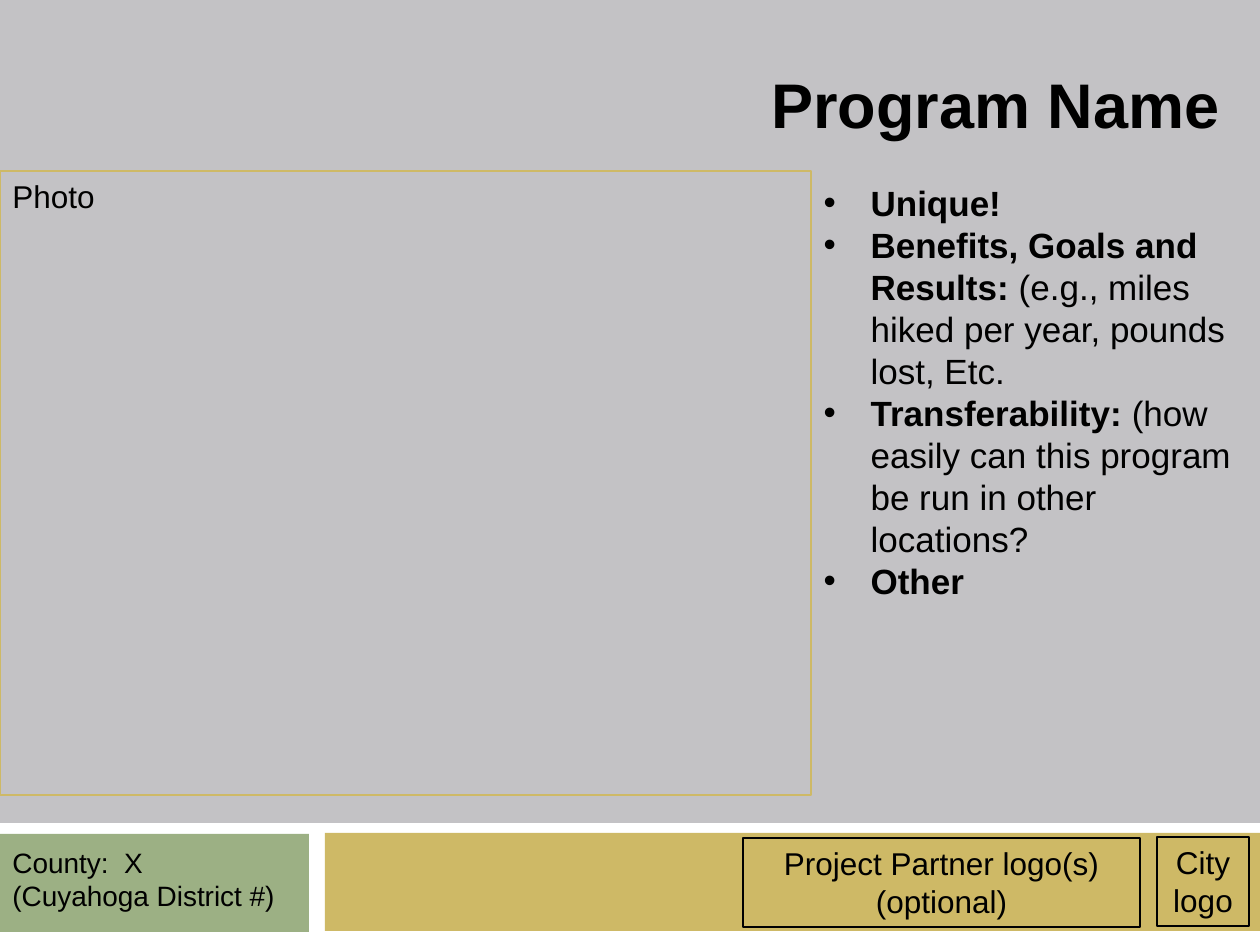
from dataclasses import dataclass
from typing import Optional

from lxml import etree
from pptx import Presentation
from pptx.dml.color import RGBColor
from pptx.enum import shapes, text
from pptx.oxml import ns
from pptx.util import Emu, Pt

EMU_PER_PX = 914400 / 126
BULLET_INDENT = 47
FONT = "Arial"
BLACK = RGBColor(0x00, 0x00, 0x00)
WHITE = RGBColor(0xFF, 0xFF, 0xFF)
GRAY = RGBColor(0xC3, 0xC2, 0xC5)
GREEN = RGBColor(0x9C, 0xB0, 0x84)
GOLD = RGBColor(0xCE, 0xB9, 0x66)
LEFT, CENTER, RIGHT = text.PP_ALIGN.LEFT, text.PP_ALIGN.CENTER, text.PP_ALIGN.RIGHT
TOP, BOTTOM = text.MSO_ANCHOR.TOP, text.MSO_ANCHOR.BOTTOM


@dataclass(frozen=True)
class Area:
    left: int
    top: int
    width: int
    height: int


@dataclass(frozen=True)
class Words:
    content: str
    bold: bool = False


@dataclass(frozen=True)
class Panel:
    area: Area
    fill: Optional[RGBColor] = None
    outline: Optional[RGBColor] = None
    lines: tuple[str, ...] = ()
    size: int = 18
    align: text.PP_ALIGN = LEFT


PANELS = (
    Panel(Area(0, 823, 1260, 122), fill=WHITE),
    Panel(Area(-1, 834, 310, 98), fill=GREEN),
    Panel(Area(325, 833, 935, 98), fill=GOLD),
    Panel(Area(0, 171, 811, 624), outline=GOLD, lines=("Photo",)),
    Panel(Area(1157, 837, 92, 89), outline=BLACK, lines=("City logo",), align=CENTER),
    Panel(Area(743, 838, 397, 89), outline=BLACK,
          lines=("Project Partner logo(s)", "(optional)"), align=CENTER),
    Panel(Area(0, 839, 306, 81), lines=("County:  X", "(Cuyahoga District #)"), size=16),
)
POINTS = (
    (Words("Unique!", True),),
    (Words("Benefits, Goals and Results: ", True),
     Words("(e.g., miles hiked per year, pounds lost, Etc.")),
    (Words("Transferability: ", True),
     Words("(how easily can this program be run in other locations?")),
    (Words("Other", True),),
)


def px(length: int) -> Emu:
    return Emu(round(length * EMU_PER_PX))


def place(shape, area: Area) -> None:
    shape.left, shape.top = px(area.left), px(area.top)
    shape.width, shape.height = px(area.width), px(area.height)


def write(shape, paragraphs, size: int, align=LEFT, anchor=TOP) -> None:
    frame = shape.text_frame
    frame.word_wrap = True
    frame.auto_size = text.MSO_AUTO_SIZE.NONE
    frame.vertical_anchor = anchor
    for index, pieces in enumerate(paragraphs):
        paragraph = frame.add_paragraph() if index else frame.paragraphs[0]
        paragraph.alignment = align
        paragraph.space_before = Pt(0)
        for words in pieces:
            run = paragraph.add_run()
            run.text = words.content
            run.font.name = FONT
            run.font.size = Pt(size)
            run.font.bold = words.bold
            run.font.color.rgb = BLACK


def add_bullet(paragraph) -> None:
    properties = paragraph._p.get_or_add_pPr()
    properties.set("marL", str(px(BULLET_INDENT)))
    properties.set("indent", str(-px(BULLET_INDENT)))
    etree.SubElement(properties, ns.qn("a:buFont")).set("typeface", FONT)
    etree.SubElement(properties, ns.qn("a:buChar")).set("char", "•")


def draw_panel(slide, panel: Panel) -> None:
    area = panel.area
    box = (px(area.left), px(area.top), px(area.width), px(area.height))
    if panel.fill is None and panel.outline is None:
        shape = slide.shapes.add_textbox(*box)
    else:
        shape = slide.shapes.add_shape(shapes.MSO_SHAPE.RECTANGLE, *box)
        shape.shadow.inherit = False
        if panel.fill is None:
            shape.fill.background()
        else:
            shape.fill.solid()
            shape.fill.fore_color.rgb = panel.fill
        if panel.outline is None:
            shape.line.fill.background()
        else:
            shape.line.color.rgb = panel.outline
            shape.line.width = Pt(0.75)
    if panel.lines:
        write(shape, [(Words(line),) for line in panel.lines], panel.size, panel.align)


def main() -> None:
    deck = Presentation()
    deck.slide_width, deck.slide_height = px(1260), px(945)
    slide = deck.slides.add_slide(deck.slide_layouts[1])
    slide.background.fill.solid()
    slide.background.fill.fore_color.rgb = GRAY

    program_name = slide.shapes.title
    place(program_name, Area(0, 21, 1232, 126))
    write(program_name, [(Words("Program Name", True),)], 36, RIGHT, BOTTOM)

    highlights = slide.placeholders[1]
    place(highlights, Area(811, 175, 449, 352))
    write(highlights, POINTS, 20)
    for point in highlights.text_frame.paragraphs:
        add_bullet(point)

    for panel in PANELS:
        draw_panel(slide, panel)
    deck.save("out.pptx")


if __name__ == "__main__":
    main()
